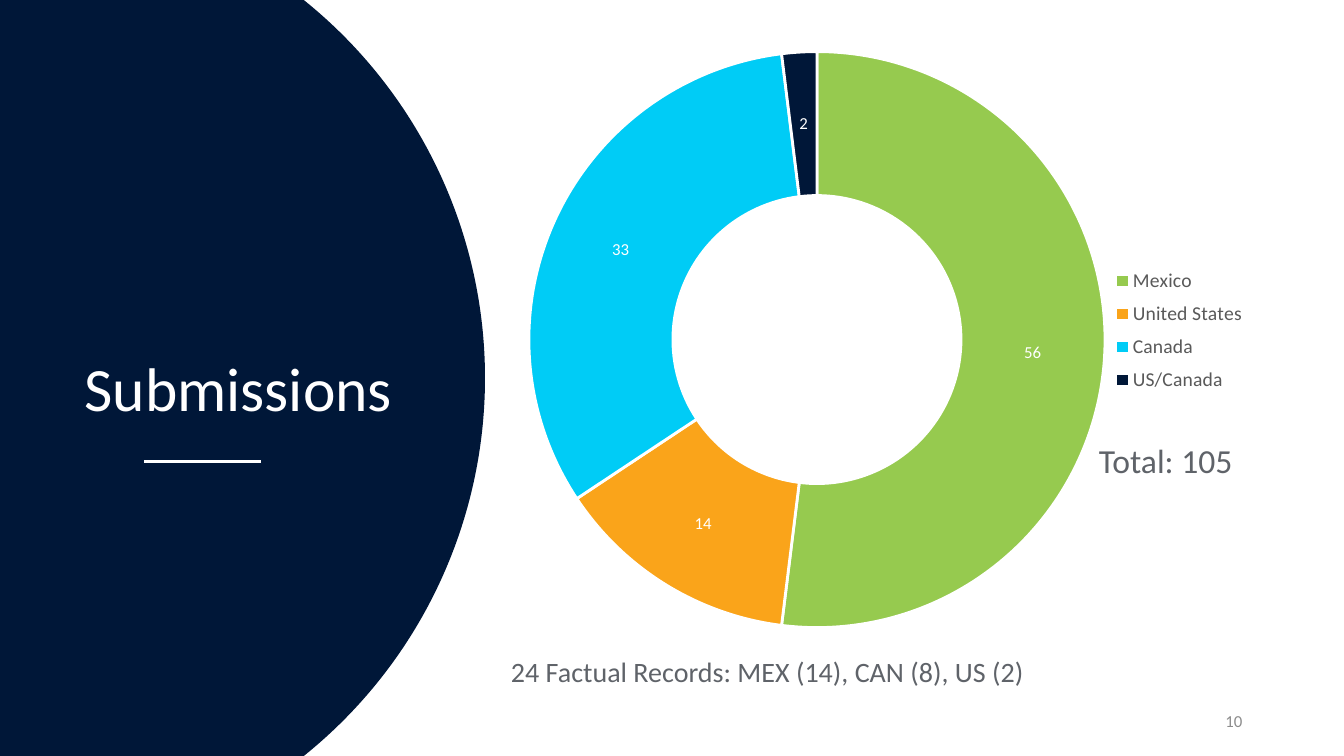
import pptx
import pptx.chart.data
import pptx.dml.color
import pptx.enum.chart
import pptx.enum.shapes
import pptx.enum.text
import pptx.oxml
import pptx.oxml.ns
import pptx.util
from pptx.util import Inches

NAVY, WHITE, SLATE = "001738", "FFFFFF", "5F6369"
COUNTRIES = {
    "Mexico": (53, "96CA4F"),
    "United States": (14, "FAA41A"),
    "Canada": (33, "00CCF6"),
    "US/Canada": (2, NAVY),
}
MEXICO_LABEL = "56"


def rgb(color):
    return pptx.dml.color.RGBColor.from_string(color)


def set_layout(parent, index, **fractions):
    """Place a chart part by fractions (x, y, w, h) of the chart frame."""
    for old in parent.xpath("c:layout"):
        parent.remove(old)
    modes = {"xMode": "edge", "yMode": "edge"}
    if "plotArea" in parent.tag:
        modes = {"layoutTarget": "inner", **modes}
    tags = "".join(f'<c:{k} val="{v}"/>' for k, v in {**modes, **fractions}.items())
    parent.insert(index, pptx.oxml.parse_xml(
        f'<c:layout {pptx.oxml.ns.nsdecls("c")}>'
        f"<c:manualLayout>{tags}</c:manualLayout></c:layout>"))


class SlideBuilder:
    font_name = "Calibri"

    def __init__(self, prs):
        self.s = prs.slides.add_slide(prs.slide_layouts[6])

    def style(self, font, size, color):
        for name, value in {"name": self.font_name, "size": pptx.util.Pt(size)}.items():
            setattr(font, name, value)
        font.color.rgb = rgb(color)

    def circle(self, x, y, diameter, color):
        sp = self.s.shapes.add_shape(
            pptx.enum.shapes.MSO_SHAPE.OVAL,
            Inches(x), Inches(y), Inches(diameter), Inches(diameter))
        sp.shadow.inherit = False
        sp.fill.solid()
        sp.fill.fore_color.rgb = rgb(color)
        sp.line.fill.background()

    def rule(self, x1, x2, y, color, width):
        line = self.s.shapes.add_connector(
            pptx.enum.shapes.MSO_CONNECTOR.STRAIGHT,
            Inches(x1), Inches(y), Inches(x2), Inches(y))
        line.line.color.rgb = rgb(color)
        line.line.width = pptx.util.Pt(width)
        line.element.spPr.append(
            pptx.oxml.parse_xml(f'<a:effectLst {pptx.oxml.ns.nsdecls("a")}/>'))

    def text(self, words, box, size, color, frame=None, para=None):
        tf = self.s.shapes.add_textbox(*map(Inches, box)).text_frame
        p = tf.paragraphs[0]
        for target, values in ((tf, {"word_wrap": True, **(frame or {})}), (p, para or {})):
            for name, value in values.items():
                setattr(target, name, value)
        r = p.add_run()
        r.text = words
        self.style(r.font, size, color)

    def doughnut(self, box, countries):
        data = pptx.chart.data.CategoryChartData()
        data.categories = list(countries)
        data.add_series("Series 1", [value for value, _ in countries.values()])
        chart = self.s.shapes.add_chart(
            pptx.enum.chart.XL_CHART_TYPE.DOUGHNUT, *map(Inches, box), data).chart
        self.style(chart.font, 10, "000000")
        chart.has_title = False
        chart.has_legend = True
        chart.legend.position = pptx.enum.chart.XL_LEGEND_POSITION.RIGHT
        chart.legend.include_in_layout = False
        self.style(chart.legend.font, 14, "595959")

        plot = chart.plots[0]
        plot.vary_by_categories = True
        series = plot.series[0]
        for i, (_, color) in enumerate(countries.values()):
            fmt = series.points[i].format
            fmt.fill.solid()
            fmt.fill.fore_color.rgb = rgb(color)
            fmt.line.color.rgb = rgb(WHITE)
            fmt.line.width = pptx.util.Pt(2)
        labels = series.data_labels
        labels.show_value = True
        self.style(labels.font, 12, WHITE)
        r = series.points[0].data_label.text_frame.paragraphs[0].add_run()
        r.text = MEXICO_LABEL
        self.style(r.font, 12, WHITE)

        root = chart.element
        root.xpath(".//c:holeSize")[0].set("val", "69")
        set_layout(root.xpath(".//c:plotArea")[0], 0, x=0.02, y=0.03, w=0.77, h=0.94)
        set_layout(root.xpath(".//c:legend")[0], 1, x=0.79, y=0.37, w=0.19, h=0.23)


def main():
    prs = pptx.Presentation()
    prs.slide_width, prs.slide_height = Inches(13.33), Inches(7.5)
    b = SlideBuilder(prs)
    anchor = pptx.enum.text.MSO_ANCHOR.MIDDLE
    grow = {"auto_size": pptx.enum.text.MSO_AUTO_SIZE.SHAPE_TO_FIT_TEXT}
    no_inset = {f"margin_{side}": 0 for side in ("left", "top", "right", "bottom")}

    b.circle(-4.81, -1.06, 9.62, NAVY)
    b.rule(1.43, 2.59, 4.58, WHITE, 2)
    b.text("Submissions", (0.74, 0.94, 3.97, 6.56), 44, WHITE,
           {"vertical_anchor": anchor, "margin_bottom": Inches(0.72)},
           {"line_spacing": 0.9})
    b.text("10", (9.42, 6.95, 3, 0.4), 12, "8C8C8C", {"vertical_anchor": anchor},
           {"alignment": pptx.enum.text.PP_ALIGN.RIGHT})
    b.doughnut((5.07, 0.33, 7.49, 6.08), COUNTRIES)
    b.text("24 Factual Records: MEX (14), CAN (8), US (2)",
           (4.97, 6.44, 6.24, 0.44), 20, SLATE, grow)
    b.text("Total: 105", (10.89, 4.36, 1.67, 0.4), 24, SLATE,
           {**grow, **no_inset, "margin_left": Inches(0.01)})
    prs.save("out.pptx")


if __name__ == "__main__":
    main()
